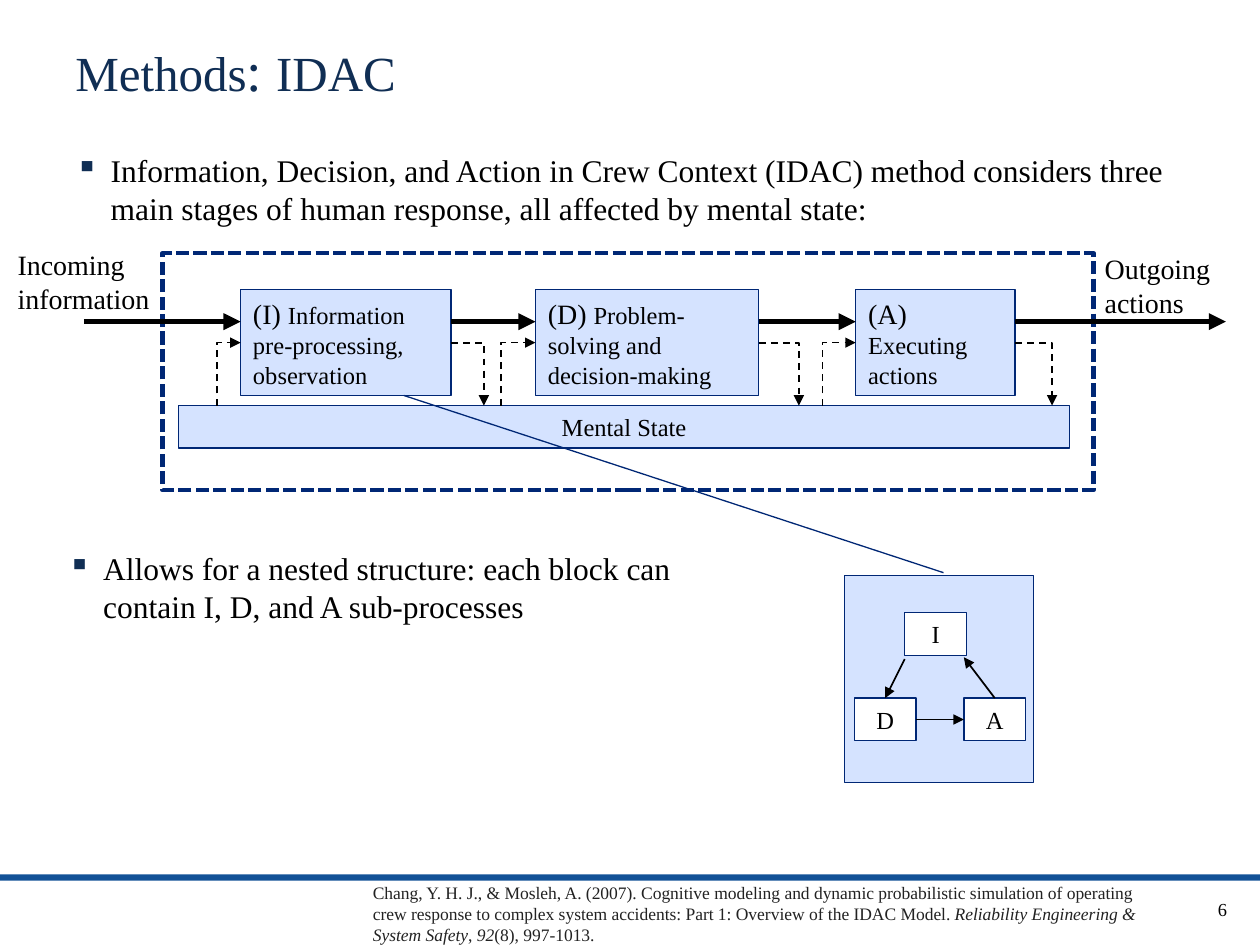
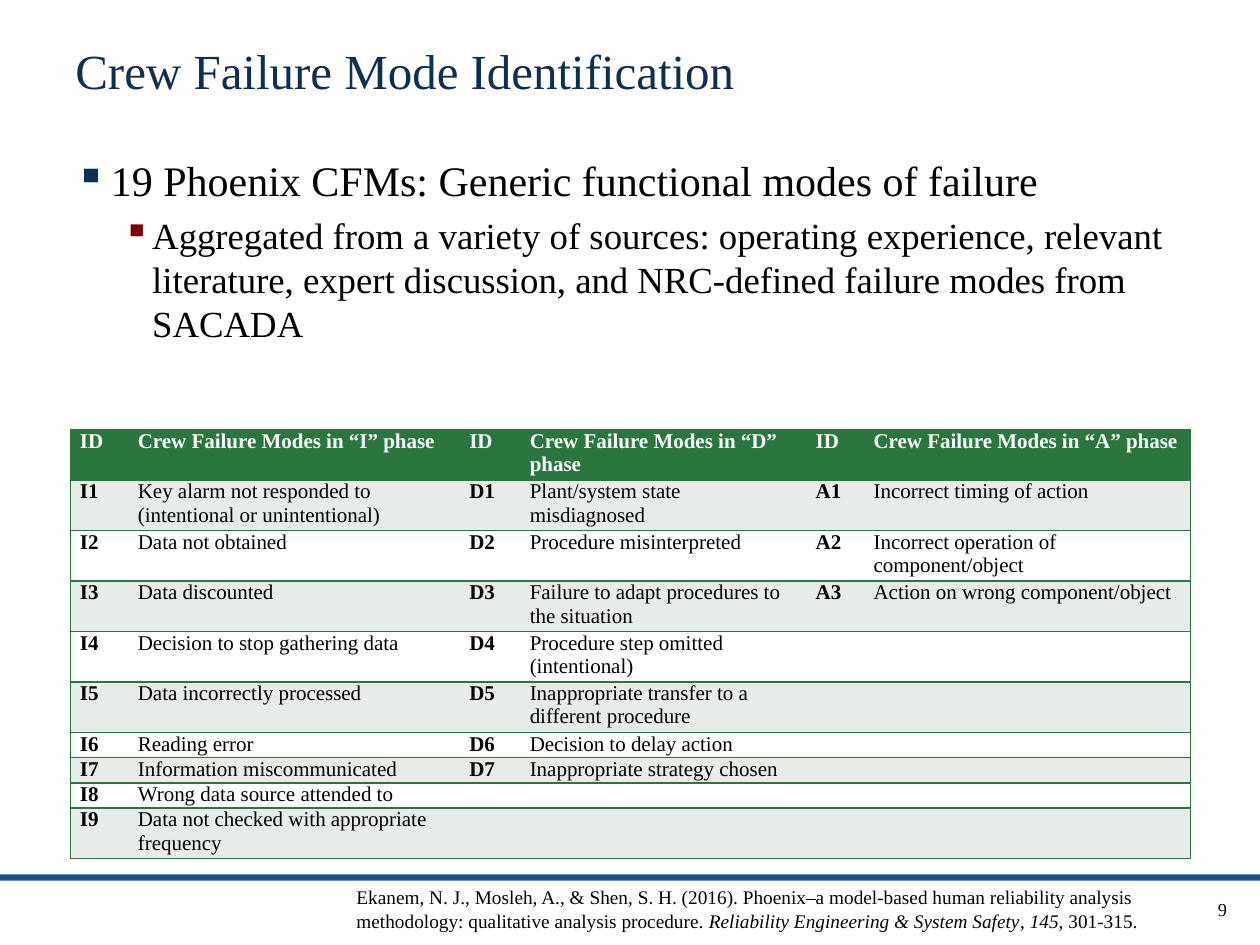
import pptx
import pptx.util
import pptx.dml.color
import pptx.enum.dml
import pptx.enum.shapes
import pptx.enum.text
import pptx.oxml.ns
from lxml import etree

Pt = pptx.util.Pt
RGBColor = pptx.dml.color.RGBColor
SHAPE = pptx.enum.shapes.MSO_SHAPE
CONNECTOR = pptx.enum.shapes.MSO_CONNECTOR
DASH = pptx.enum.dml.MSO_LINE
ALIGN = pptx.enum.text.PP_ALIGN
MIDDLE = pptx.enum.text.MSO_ANCHOR.MIDDLE
qn = pptx.oxml.ns.qn

FONT = "Times New Roman"
BLACK = RGBColor(0x00, 0x00, 0x00)
WHITE = RGBColor(0xFF, 0xFF, 0xFF)
CHARCOAL = RGBColor(0x22, 0x22, 0x22)
TITLE_NAVY = RGBColor(0x10, 0x2E, 0x54)
BAND_BLUE = RGBColor(0x13, 0x52, 0x97)
OUTLINE_BLUE = RGBColor(0x00, 0x27, 0x75)
PALE_BLUE = RGBColor(0xD5, 0xE3, 0xFF)
MAROON = RGBColor(0x80, 0x00, 0x00)
GREEN = RGBColor(0x2B, 0x75, 0x3E)
PALE_GREEN = RGBColor(0xE8, 0xEC, 0xE8)


def write(frame, text, *, size, color=BLACK, bold=False, align=None, anchor=None,
          bullet=None, margin=0, hanging=0, before=0, spacing=None):
    """Add a paragraph; text is a string or a list of (string, size, italic) runs."""
    frame.word_wrap = True
    if anchor is not None:
        frame.vertical_anchor = anchor
    paragraph = frame.paragraphs[0] if not frame.text else frame.add_paragraph()
    if bullet is not None:
        properties = paragraph._p.get_or_add_pPr()
        properties.set("marL", str(Pt(margin)))
        properties.set("indent", str(-Pt(hanging)))
        bullet_color = etree.SubElement(properties, qn("a:buClr"))
        etree.SubElement(bullet_color, qn("a:srgbClr"), val=str(bullet))
        etree.SubElement(properties, qn("a:buChar"), char="▪")
    if align is not None:
        paragraph.alignment = align
    if spacing:
        paragraph.line_spacing = spacing
    if before:
        paragraph.space_before = Pt(before)
    runs = [(text, size, False)] if isinstance(text, str) else text
    for words, run_size, italic in runs:
        if words:
            run = paragraph.add_run()
            run.text = words
            run.font.name = FONT
            run.font.size = Pt(run_size)
            run.font.bold = bold
            run.font.italic = italic
            run.font.color.rgb = color
    etree.SubElement(paragraph._p, qn("a:endParaRPr"), sz=str(int(size * 100)))


def add_arrow(slide, kind, start, end, width, dash=None):
    arrow = slide.shapes.add_connector(kind, *map(Pt, start + end))
    arrow.line.color.rgb = BLACK
    arrow.line.width = Pt(width)
    if dash is not None:
        arrow.line.dash_style = dash
    etree.SubElement(arrow.line._get_or_add_ln(), qn("a:tailEnd"), type="triangle")
    etree.SubElement(arrow.element.spPr, qn("a:effectLst"))
    return arrow


presentation = pptx.Presentation()
presentation.slide_width = Pt(720)
presentation.slide_height = Pt(540)

# Title, footer band, citation and page number of each slide
JOURNAL = "Reliability Engineering & System Safety"
pages = [
    ([("Methods", 28, False), (": ", 32, False), ("IDAC", 28, False)], "6",
     (206, 500.4, 463.7, 43.9), 10, CHARCOAL,
     "Chang, Y. H. J., & Mosleh, A. (2007). Cognitive modeling and dynamic probabilistic "
     "simulation of operating crew response to complex system accidents: Part 1: Overview "
     "of the IDAC Model. ", "92", "(8), 997-1013."),
    ("Crew Failure Mode Identification", "9",
     (196.6, 502.6, 463.7, 33.8), 11, BLACK,
     "Ekanem, N. J., Mosleh, A., & Shen, S. H. (2016). Phoenix–a model-based human "
     "reliability analysis methodology: qualitative analysis procedure. ",
     "145", ", 301-315."),
]
for title, number, citation_at, size, color, work, volume, place in pages:
    slide = presentation.slides.add_slide(presentation.slide_layouts[6])
    band = slide.shapes.add_shape(SHAPE.RECTANGLE, 0, Pt(499.7), Pt(720), Pt(3.6))
    band.shadow.inherit = False
    band.fill.solid()
    band.fill.fore_color.rgb = BAND_BLUE
    band.line.fill.background()
    heading = slide.shapes.add_textbox(Pt(36), Pt(3.6), Pt(607), Pt(77.8))
    write(heading.text_frame, title, size=28, color=TITLE_NAVY, anchor=MIDDLE, spacing=0.85)
    citation = slide.shapes.add_textbox(*map(Pt, citation_at))
    write(citation.text_frame,
          [(work, size, False), (JOURNAL, size, True), (", ", size, False),
           (volume, size, True), (place, size, False)], size=size, color=color)
    page_number = slide.shapes.add_textbox(Pt(660), Pt(509.8), Pt(48.2), Pt(23.8))
    write(page_number.text_frame, number, size=10.5, align=ALIGN.RIGHT)

idac, failure_modes = presentation.slides

# Slide 1: IDAC stages
for text, at in [
    ("Information, Decision, and Action in Crew Context (IDAC) method considers three "
     "main stages of human response, all affected by mental state:", (36, 82.8, 648, 60)),
    ("Allows for a nested structure: each block can contain I, D, and A sub-processes",
     (31.7, 310.3, 372, 111.6)),
]:
    point = idac.shapes.add_textbox(*map(Pt, at))
    write(point.text_frame, text, size=18, bullet=TITLE_NAVY, margin=20.2, hanging=20.2)

STAGE_TOP, STAGE_HEIGHT = 165.6, 60.5
STAGE_MIDDLE = STAGE_TOP + STAGE_HEIGHT / 2
MENTAL_TOP = 231.8
SUB_WIDTH, SUB_HEIGHT = 35.3, 24.5
stages = [  # letter, label, left, width, x of dashed line in, x of dashed line out
    ("(I) ", "Information pre-processing, observation", 137.5, 120.3, 124, 276.5),
    ("(D) ", "Problem-solving and decision-making", 306, 127.5, 286.5, 456.5),
    ("(A) ", "Executing actions", 489, 91, 470, 601.2),
]
blocks = [
    (SHAPE.RECTANGLE, (left, STAGE_TOP, width, STAGE_HEIGHT), PALE_BLUE,
     [(letter, 16, False), (label, 14, False)], ALIGN.LEFT)
    for letter, label, left, width, _, _ in stages
]
blocks += [
    (SHAPE.RECTANGLE, (102.2, MENTAL_TOP, 509, 24.2), PALE_BLUE, "Mental State", ALIGN.CENTER),
    (SHAPE.RECTANGLE, (92.9, 144.7, 532, 135.4), None, "", ALIGN.CENTER),
    (SHAPE.LINE_CALLOUT_1, (477.4, 334, 118, 108), PALE_BLUE, "", ALIGN.CENTER),
]
blocks += [
    (SHAPE.RECTANGLE, (left, top, SUB_WIDTH, SUB_HEIGHT), WHITE, letter, ALIGN.CENTER)
    for letter, left, top in [("I", 517, 350), ("D", 488.2, 398.9), ("A", 550.8, 398.9)]
]
drawn = []
for kind, at, fill, text, align in blocks:
    block = idac.shapes.add_shape(kind, *map(Pt, at))
    block.shadow.inherit = False
    block.line.color.rgb = OUTLINE_BLUE
    block.line.width = Pt(0.75)
    if fill is None:
        block.fill.background()
    else:
        block.fill.solid()
        block.fill.fore_color.rgb = fill
    if text:
        write(block.text_frame, text, size=14, align=align, anchor=MIDDLE)
    drawn.append(block)

crew_frame, nested_view, sub_i, sub_d, sub_a = drawn[4:]
crew_frame.line.width = Pt(2.5)
crew_frame.line.dash_style = DASH.SQUARE_DOT
nested_view.rotation = 90
for index, value in enumerate((0.475, -0.015, 3.33, -0.873)):
    nested_view.adjustments[index] = value

# Main flow runs from edge to edge through the stages
flow_starts = [48] + [left + width for _, _, left, width, _, _ in stages]
flow_ends = [left for _, _, left, _, _, _ in stages] + [700.5]
for start, end in zip(flow_starts, flow_ends):
    add_arrow(idac, CONNECTOR.STRAIGHT, (start, 183.8), (end, 183.8), 3.25)

# Dashed links from the mental state into each stage and back
rise = MENTAL_TOP - STAGE_MIDDLE
for _, _, left, width, enter_x, leave_x in stages:
    center_x, center_y = (enter_x + left) / 2, (MENTAL_TOP + STAGE_MIDDLE) / 2
    half_run = (left - enter_x) / 2
    enter = add_arrow(idac, CONNECTOR.ELBOW, (center_x + rise / 2, center_y + half_run),
                      (center_x - rise / 2, center_y - half_run), 1, DASH.DASH)
    enter.element.spPr.find(qn("a:xfrm")).set("rot", "5400000")
    leave = add_arrow(idac, CONNECTOR.ELBOW, (left + width, STAGE_MIDDLE),
                      (leave_x, MENTAL_TOP), 1, DASH.DASH)
    for link in (enter, leave):
        link.element.spPr.find(qn("a:prstGeom")).set("prst", "bentConnector2")

for text, at in [
    ([("Incoming", 16, False), (" ", 18, False), ("information", 16, False)],
     (3, 136, 103.7, 48.2)),
    ("Outgoing actions", (624.2, 140.4, 94.3, 46)),
]:
    label = idac.shapes.add_textbox(*map(Pt, at))
    write(label.text_frame, text, size=16)

d_to_a = add_arrow(idac, CONNECTOR.STRAIGHT, (523.5, 411.2), (550.8, 411.2), 1)
d_to_a.begin_connect(sub_d, 3)
d_to_a.end_connect(sub_a, 1)
i_to_d = add_arrow(idac, CONNECTOR.STRAIGHT, (517, 376.6), (505.8, 398.9), 1)
i_to_d.end_connect(sub_d, 0)
a_to_i = add_arrow(idac, CONNECTOR.STRAIGHT, (568.4, 398.9), (550.8, 375.6), 1)
a_to_i.begin_connect(sub_a, 0)

# Slide 2: crew failure modes
summary = failure_modes.shapes.add_textbox(Pt(36), Pt(85), Pt(677.5), Pt(159.8))
write(summary.text_frame, "19 Phoenix CFMs: Generic functional modes of failure",
      size=24, bullet=TITLE_NAVY, margin=20.2, hanging=20.2)
write(summary.text_frame,
      "Aggregated from a variety of sources: operating experience, relevant literature, "
      "expert discussion, and NRC-defined failure modes from SACADA",
      size=21, bullet=MAROON, margin=43.9, hanging=16.6, before=4.2)

modes = {
    "I": ["Key alarm not responded to (intentional or unintentional)", "Data not obtained",
          "Data discounted", "Decision to stop gathering data", "Data incorrectly processed",
          "Reading error", "Information miscommunicated", "Wrong data source attended to",
          "Data not checked with appropriate frequency"],
    "D": ["Plant/system state misdiagnosed", "Procedure misinterpreted",
          "Failure to adapt procedures to the situation",
          "Procedure step omitted (intentional)",
          "Inappropriate transfer to a different procedure", "Decision to delay action",
          "Inappropriate strategy chosen"],
    "A": ["Incorrect timing of action", "Incorrect operation of component/object",
          "Action on wrong component/object"],
}
column_widths = [33.1, 189.4, 34.6, 163.4, 33.1, 186.5]
row_heights = [27.4, 28.8, 27.4, 28.8, 27.4, 28.8, 14.4, 14.4, 14.4, 28.8]
rows = [[]] + [[] for _ in modes["I"]]
for phase, names in modes.items():
    rows[0] += ["ID", f"Crew Failure Modes in “{phase}” phase"]
    for number, row in enumerate(rows[1:], 1):
        row += [f"{phase}{number}", names[number - 1]] if number <= len(names) else ["", ""]

table = failure_modes.shapes.add_table(
    len(rows), len(column_widths), Pt(40.3), Pt(245.5),
    Pt(sum(column_widths)), Pt(sum(row_heights))).table
table.horz_banding = False
for column, width in zip(table.columns, column_widths):
    column.width = Pt(width)
for r, row in enumerate(rows):
    table.rows[r].height = Pt(row_heights[r])
    for c, text in enumerate(row):
        cell = table.cell(r, c)
        cell.margin_left = cell.margin_right = Pt(5.4)
        cell.margin_top = cell.margin_bottom = 0
        edges = {"lnL": c == 0, "lnR": c == len(row) - 1, "lnT": True, "lnB": True}
        for edge, visible in edges.items():
            border = etree.SubElement(cell._tc.get_or_add_tcPr(), qn("a:" + edge), w=str(Pt(1)))
            if visible:
                ink = etree.SubElement(border, qn("a:solidFill"))
                etree.SubElement(ink, qn("a:srgbClr"), val=str(GREEN))
            else:
                etree.SubElement(border, qn("a:noFill"))
        cell.fill.solid()
        cell.fill.fore_color.rgb = GREEN if r == 0 else PALE_GREEN if r % 2 else WHITE
        write(cell.text_frame, text, size=12, color=WHITE if r == 0 else BLACK,
              bold=r == 0 or c % 2 == 0)

presentation.save("out.pptx")
